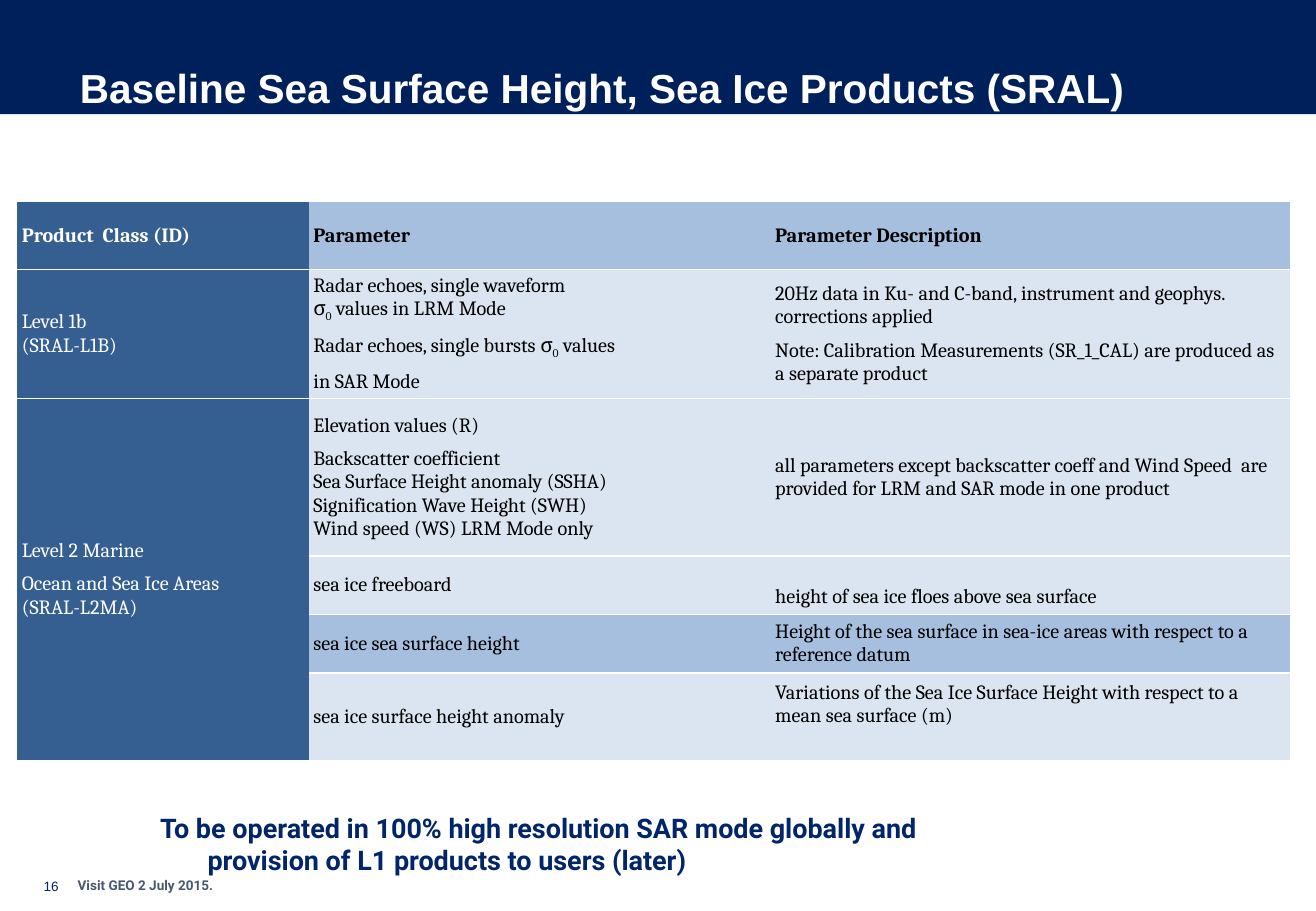
from lxml import etree
from pptx import Presentation
from pptx import util as u
from pptx.dml.color import RGBColor
from pptx.enum import shapes, text
from pptx.oxml import ns

WIDTH, HEIGHT = u.Inches(10.83), u.Inches(7.5)
COLOURS = {
    "band": "00205B", "navy": "002569", "slate": "47586A",
    "class": "365F91", "strong": "A7BFDE", "pale": "DBE5F1",
    "white": "FFFFFF", "black": "000000",
}
PLAIN_TABLE = "{2D5ABB26-0587-4C30-8999-92F81FD0307C}"
LINE = u.Pt(14)

# Table content: columns and rows as relative sizes
COLUMNS = [240, 380, 428]
ROWS = [56, 106, 130, 48, 48, 72]
ROW_FILLS = ["strong", "pale", "pale", "pale", "strong", "pale"]
HEADINGS = ["Product  Class (ID)", "Parameter", "Parameter Description"]
PRODUCTS = [
    [["Level 1b\n(SRAL-L1B)"],
     ["Radar echoes, single waveform\nσ0 values in LRM Mode",
      "Radar echoes, single bursts σ0 values",
      "in SAR Mode"],
     ["20Hz data in Ku- and C-band, instrument and geophys. corrections applied",
      "Note: Calibration Measurements (SR_1_CAL) are produced as a separate product"]],
    [["Level 2 Marine", "Ocean and Sea Ice Areas\n(SRAL-L2MA)"],
     ["Elevation values (R)",
      "Backscatter coefficient\nSea Surface Height anomaly (SSHA)\n"
      "Signification Wave Height (SWH)\nWind speed (WS) LRM Mode only"],
     ["all parameters except backscatter coeff and Wind Speed  are "
      "provided for LRM and SAR mode in one product"]],
    [None, ["sea ice freeboard"], ["height of sea ice floes above sea surface"]],
    [None, ["sea ice sea surface height"],
     ["Height of the sea surface in sea-ice areas with respect to a reference datum"]],
    [None, ["sea ice surface height anomaly"],
     ["Variations of the Sea Ice Surface Height with respect to a mean sea surface (m)"]],
]


def colour(name):
    return RGBColor.from_string(COLOURS[name])


def area(left, top, width, height):
    """Turn percentages of the slide into lengths."""
    return (int(WIDTH * left / 100), int(HEIGHT * top / 100),
            int(WIDTH * width / 100), int(HEIGHT * height / 100))


def style(paragraph, size, face, ink, bold):
    font = paragraph.font
    font.size, font.name, font.bold = u.Pt(size), face, bold
    font.color.rgb = colour(ink)


def write(paragraph, words):
    """Add words with line breaks, lowering the index of each σ0."""
    for number, line in enumerate(words.split("\n")):
        if number:
            paragraph.add_line_break()
        before, sigma, after = line.partition("σ0")
        paragraph.add_run().text = before + sigma[:1]
        if sigma:
            index = paragraph.add_run()
            index.text = "0"
            index._r.get_or_add_rPr().set("baseline", "-25000")
            paragraph.add_run().text = after


def add_label(slide, place, words, size, face, ink, bold=True,
              anchor=text.MSO_ANCHOR.TOP, margin=0, indent=0):
    frame = slide.shapes.add_textbox(*area(*place)).text_frame
    frame.word_wrap = True
    frame.vertical_anchor = anchor
    paragraph = frame.paragraphs[0]
    properties = paragraph._p.get_or_add_pPr()
    properties.set("marL", str(u.Inches(margin)))
    properties.set("indent", str(u.Inches(indent)))
    write(paragraph, words)
    style(paragraph, size, face, ink, bold)
    return frame


def add_page_number(slide, number):
    frame = add_label(slide, (3.23, 96.4, 1.3, 1.73), number, 8, "Arial", "navy", False)
    frame.word_wrap = False
    frame.margin_left = frame.margin_right = frame.margin_top = frame.margin_bottom = 0
    frame.paragraphs[0].alignment = text.PP_ALIGN.CENTER


def add_band(slide):
    band = slide.shapes.add_shape(shapes.MSO_SHAPE.RECTANGLE, *area(0, 0, 100, 12.53))
    band.shadow.inherit = False
    band.fill.solid()
    band.fill.fore_color.rgb = colour("band")
    band.line.fill.background()


def underline_cell(cell):
    """Draw a thin white rule under a cell."""
    rule = etree.Element(ns.qn("a:lnB"), w=str(u.Pt(1)))
    fill = etree.SubElement(rule, ns.qn("a:solidFill"))
    etree.SubElement(fill, ns.qn("a:srgbClr"), val=COLOURS["white"])
    cell._tc.get_or_add_tcPr().insert(0, rule)


def fill_cell(cell, paragraphs, fill, ink, bold):
    cell.fill.solid()
    cell.fill.fore_color.rgb = colour(fill)
    underline_cell(cell)
    cell.vertical_anchor = text.MSO_ANCHOR.MIDDLE
    cell.margin_left = cell.margin_right = u.Inches(0.04)
    cell.margin_top = cell.margin_bottom = 0
    frame = cell.text_frame
    for number, words in enumerate(paragraphs):
        paragraph = frame.add_paragraph() if number else frame.paragraphs[0]
        if number:
            paragraph.space_before = u.Pt(6)
        write(paragraph, words)
        style(paragraph, 12, "Cambria", ink, bold)


def add_products(slide):
    place = area(1.29, 22.13, 96.77, 61.33)
    products = slide.shapes.add_table(len(ROWS), len(COLUMNS), *place).table
    products._tbl.tblPr.find(ns.qn("a:tableStyleId")).text = PLAIN_TABLE
    products.horz_banding = False
    for column, share in zip(products.columns, COLUMNS):
        column.width = int(place[2] * share / sum(COLUMNS))
    for row, share in zip(products.rows, ROWS):
        row.height = int(place[3] * share / sum(ROWS))

    products.cell(2, 0).merge(products.cell(5, 0))
    content = [[[heading] for heading in HEADINGS]] + PRODUCTS
    for r, row in enumerate(content):
        for c, paragraphs in enumerate(row):
            if paragraphs:
                fill_cell(products.cell(r, c), paragraphs,
                          ROW_FILLS[r] if c else "class",
                          "black" if c else "white", r == 0)

    # Two descriptions sit half a line off the middle
    products.cell(3, 2).margin_top = LINE
    products.cell(5, 2).margin_bottom = LINE


def main():
    deck = Presentation()
    deck.slide_width, deck.slide_height = WIDTH, HEIGHT
    slide = deck.slides.add_slide(deck.slide_layouts[6])

    # Footer
    add_page_number(slide, "16")
    add_label(slide, (4.99, 95.6, 45.4, 3.2), "Visit GEO 2 July 2015.", 8, "Roboto", "slate")

    # Heading
    add_band(slide)
    add_label(slide, (3.32, 3.47, 94.83, 12.27),
              "Baseline Sea Surface Height, Sea Ice Products (SRAL)", 24, "Arial", "white",
              anchor=text.MSO_ANCHOR.MIDDLE, margin=0.2)

    # Products and closing remark
    add_products(slide)
    add_label(slide, (7.57, 88.4, 71.56, 10.53),
              "To be operated in 100% high resolution SAR mode globally and "
              "provision of L1 products to users (later)", 16, "Roboto", "navy",
              margin=0.79, indent=-0.39)

    deck.save("out.pptx")


if __name__ == "__main__":
    main()
